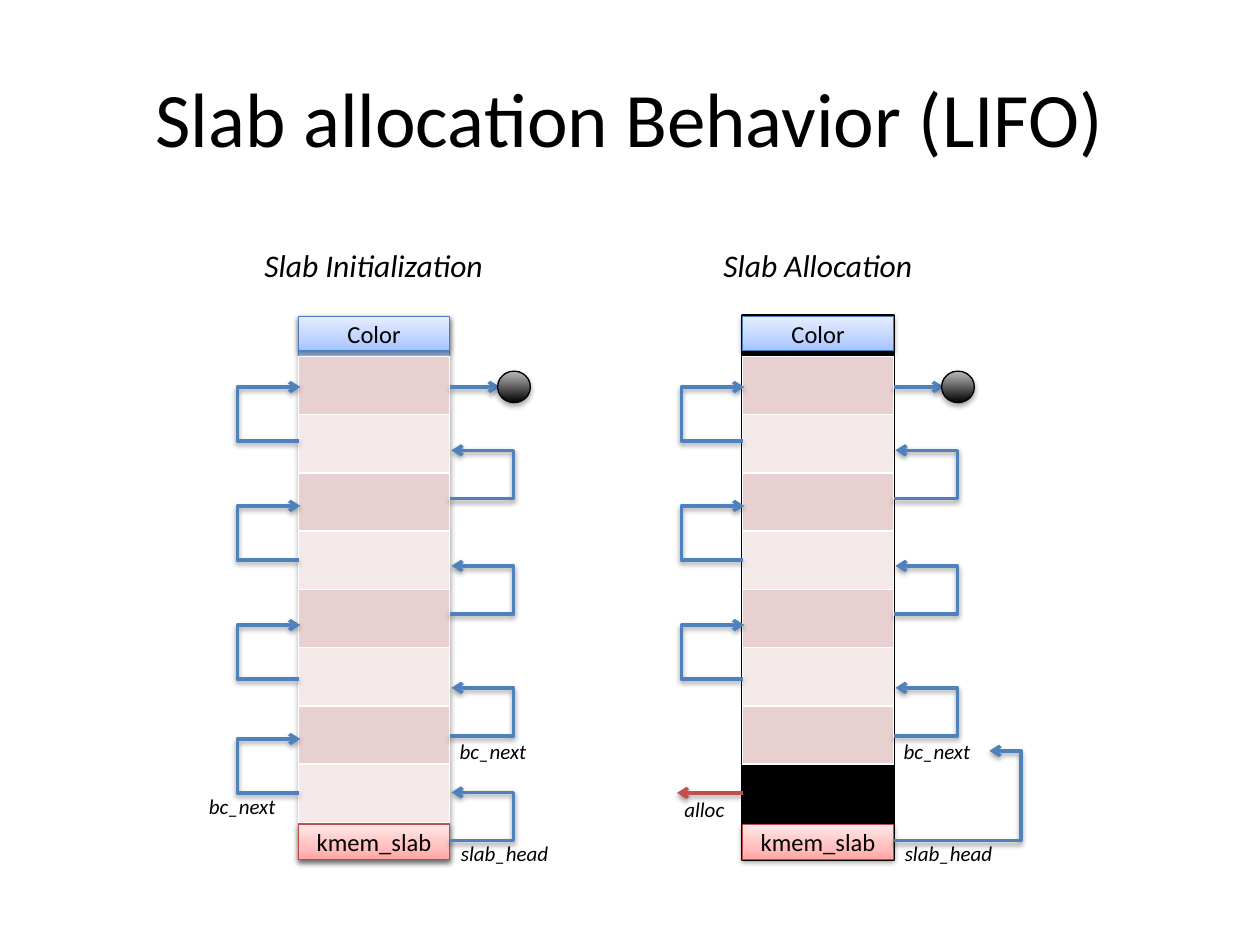
from pptx import Presentation
from pptx.dml.color import RGBColor
from pptx.enum.shapes import MSO_CONNECTOR, MSO_SHAPE
from pptx.enum.text import MSO_ANCHOR, PP_ALIGN
from pptx.oxml import parse_xml
from pptx.oxml.ns import nsdecls
from pptx.util import Pt

RECT, OVAL = MSO_SHAPE.RECTANGLE, MSO_SHAPE.OVAL
STRAIGHT, ELBOW = MSO_CONNECTOR.STRAIGHT, MSO_CONNECTOR.ELBOW
MIDDLE, CENTER, LEFT = MSO_ANCHOR.MIDDLE, PP_ALIGN.CENTER, PP_ALIGN.LEFT

BLUE, RED, BLACK, WHITE = "4F81BD", "C0504D", "000000", "FFFFFF"
BLUE_EDGE, RED_EDGE = "4B7EBC", "BF4C48"
BODY_STOPS = [(0, "3F80CE"), (100, "A4C4FF")]
COLOR_STOPS = [(0, "A4C4FF"), (35, "BFD4FF"), (100, "E6EEFF")]
SLAB_STOPS = [(0, "FFA6A5"), (35, "FFC0BF"), (100, "FFE7E7")]
END_STOPS = [(0, BLACK), (100, "BDBDBD")]
BANDS = ["E8D0D0", "F4E9E9"]

BAR_H, ROW_H, TABLE_TOP = 19.7, 33.3, 23
LEFT_STARTS, LEFT_RISE, LEFT_REACH = [71.3, 139.2, 207.3, 272.4], 30.8, -35.2
RIGHT_STARTS, RIGHT_RISE, RIGHT_REACH = [104.2, 170.2, 239.9, 299.7], 27.5, 36.8
END_Y = 40.4


def rgb(value):
    """Turn a hex string into a colour."""
    return RGBColor.from_string(value)


def add_shadow(sp, alpha, dist):
    """Give a shape or connector a soft shadow straight below it."""
    sp._element.spPr.append(parse_xml(
        f'<a:effectLst {nsdecls("a")}><a:outerShdw blurRad="{Pt(3.1)}" dist="{Pt(dist)}" '
        f'dir="5400000" rotWithShape="0"><a:srgbClr val="{BLACK}">'
        f'<a:alpha val="{alpha * 1000}"/></a:srgbClr></a:outerShdw></a:effectLst>'))


def set_gradient(sp, stops):
    """Fill a shape with colour stops running from bottom to top."""
    sp.fill.gradient()
    sp.fill.gradient_angle = 90
    old = sp._element.spPr.xpath("./a:gradFill/a:gsLst")[0]
    marks = "".join(f'<a:gs pos="{pos * 1000}"><a:srgbClr val="{color}"/></a:gs>'
                    for pos, color in stops)
    old.getparent().replace(old, parse_xml(f'<a:gsLst {nsdecls("a")}>{marks}</a:gsLst>'))


def write(sp, text, size, align=LEFT, italic=False):
    """Write one black paragraph into a shape."""
    p = sp.text_frame.paragraphs[0]
    p.text, p.alignment = text, align
    p.font.name, p.font.size, p.font.italic = "Calibri", Pt(size), italic
    p.font.color.rgb = rgb(BLACK)


def add_label(s, x, y, w, h, text, size):
    """Add an unwrapped italic label."""
    sp = s.shapes.add_textbox(Pt(x), Pt(y), Pt(w), Pt(h))
    sp.text_frame.word_wrap = False
    write(sp, text, size, italic=True)


def add_block(s, kind, x, y, w, h, stops, edge, shadow):
    """Add an outlined gradient shape with a shadow."""
    sp = s.shapes.add_shape(kind, Pt(x), Pt(y), Pt(w), Pt(h))
    set_gradient(sp, stops)
    sp.line.color.rgb, sp.line.width = rgb(edge), Pt(0.75)
    add_shadow(sp, *shadow)
    return sp


def add_bar(s, x, y, w, text, stops, edge):
    """Add a captioned bar across a slab."""
    sp = add_block(s, RECT, x, y, w, BAR_H, stops, edge, (38, 1.6))
    sp.text_frame.vertical_anchor = MIDDLE
    write(sp, text, 14, CENTER)


def add_arrow(s, kind, x1, y1, x2, y2, color=BLUE):
    """Add a connector with an open arrowhead at its end."""
    sp = s.shapes.add_connector(kind, Pt(x1), Pt(y1), Pt(x2), Pt(y2))
    sp.line.color.rgb, sp.line.width = rgb(color), Pt(2)
    sp.line._get_or_add_ln().append(parse_xml(f'<a:tailEnd {nsdecls("a")} type="arrow"/>'))
    add_shadow(sp, 38, 1.6)
    return sp


def add_loop(s, x, y, rise, reach, run=1):
    """Add an elbow arrow that goes out by reach, up by rise and back to run."""
    sp = add_arrow(s, ELBOW, x, y, x + run, y - rise)
    adj = round(reach / run * 100000)
    sp._element.xpath(".//a:avLst")[0].append(
        parse_xml(f'<a:gd {nsdecls("a")} name="adj1" fmla="val {adj}"/>'))


def add_buffers(s, x, y, w, count):
    """Add the banded column of buffers with white borders."""
    frame = s.shapes.add_table(count, 1, Pt(x), Pt(y), Pt(w), Pt(count * ROW_H))
    for i, row in enumerate(frame.table.rows):
        row.height = Pt(ROW_H)
        cell = row.cells[0]
        cell.fill.solid()
        cell.fill.fore_color.rgb = rgb(BANDS[i % 2])
        for at, side in enumerate("LRTB"):
            cell._tc.get_or_add_tcPr().insert(at, parse_xml(
                f'<a:ln{side} {nsdecls("a")} w="{Pt(1)}"><a:solidFill>'
                f'<a:srgbClr val="{WHITE}"/></a:solidFill></a:ln{side}>'))


def add_title(s, x, y, w, h, text):
    """Add the centred slide title."""
    sp = s.shapes.add_textbox(Pt(x), Pt(y), Pt(w), Pt(h))
    sp.text_frame.word_wrap = True
    sp.text_frame.vertical_anchor = MIDDLE
    write(sp, text, 44, CENTER)


def add_slab(s, x, y, w, h, allocated):
    """Draw a slab with its free list, before or after one allocation."""
    right, free = x + w, 7 if allocated else 8
    if allocated:
        sp = s.shapes.add_shape(RECT, Pt(x), Pt(y), Pt(w), Pt(h))
        sp.shadow.inherit = False
        sp.fill.solid()
        sp.fill.fore_color.rgb = rgb(BLACK)
        sp.line.color.rgb, sp.line.width = rgb(BLACK), Pt(2)
        add_label(s, x - 18, y - 43.9, 128.2, 29, "Slab Allocation", 18)
    else:
        add_block(s, RECT, x, y, w, h, BODY_STOPS, BLUE_EDGE, (35, 1.8))
        add_label(s, x - 26.6, y - 43.9, 145.4, 29, "Slab Initialization", 18)
    add_bar(s, x, y, w, "Color", COLOR_STOPS, BLUE_EDGE)
    add_bar(s, x, y + h - BAR_H, w, "kmem_slab", SLAB_STOPS, RED_EDGE)
    add_buffers(s, x, y + TABLE_TOP, w, free)

    for start in LEFT_STARTS[:free // 2]:
        add_loop(s, x, y + start, LEFT_RISE, LEFT_REACH)
    for start in RIGHT_STARTS[:free // 2]:
        add_loop(s, right, y + start, RIGHT_RISE, RIGHT_REACH)
    add_arrow(s, STRAIGHT, right, y + END_Y, right + 28.6, y + END_Y)
    add_block(s, OVAL, right + 27.4, y + END_Y - 9, 18.7, 18, END_STOPS, BLACK, (35, 1.8))

    add_label(s, right - 0.7, y + 295.9, 67.7, 21.8, "slab_head", 12)
    add_label(s, right - 1.4, y + 237.6, 56.2, 21.8, "bc_next", 12)
    if allocated:
        add_loop(s, right, y + RIGHT_STARTS[-1], 51.3, 72.7, run=54.7)
        level = y + LEFT_STARTS[-1]
        add_arrow(s, STRAIGHT, x, level, x - 37.4, level, RED)
        add_label(s, x - 40.3, y + 270.7, 40.3, 21.8, "alloc", 12)
    else:
        add_label(s, x - 58.3, y + 269.3, 56.2, 21.8, "bc_next", 12)


def main():
    """Build the slide and save it."""
    prs = Presentation()
    prs.slide_width, prs.slide_height = Pt(720), Pt(540)
    s = prs.slides.add_slide(prs.slide_layouts[6])
    add_title(s, 36, 21.6, 648, 90, "Slab allocation Behavior (LIFO)")
    for x, allocated in [(170.6, False), (424.3, True)]:
        add_slab(s, x, 180.7, 86.4, 310.3, allocated)
    prs.save("out.pptx")


if __name__ == "__main__":
    main()
